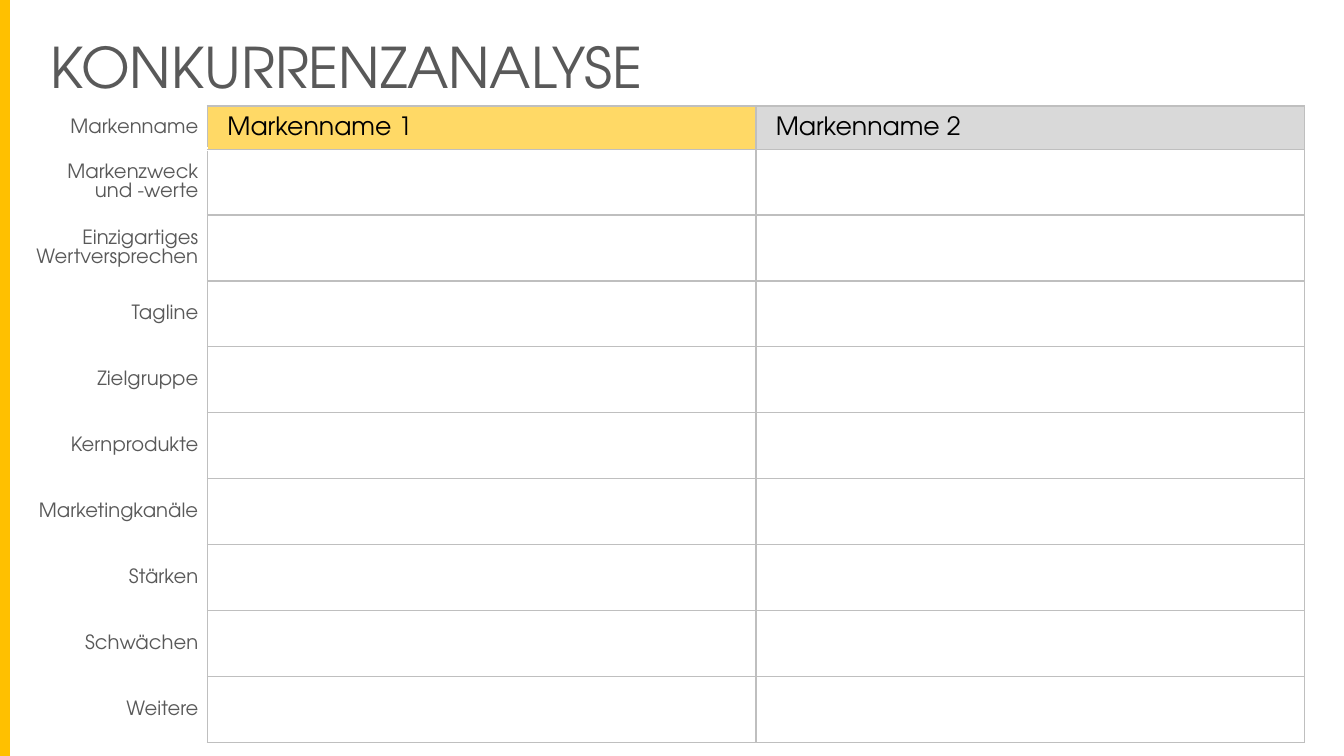
from dataclasses import dataclass

from lxml import etree
from pptx import Presentation
from pptx.dml.color import RGBColor
from pptx.enum.shapes import MSO_SHAPE
from pptx.enum.text import MSO_ANCHOR, MSO_AUTO_SIZE, PP_ALIGN
from pptx.oxml.ns import qn
from pptx.util import Cm, Pt

RECT = MSO_SHAPE.RECTANGLE
MIDDLE = MSO_ANCHOR.MIDDLE
LEFT, RIGHT = PP_ALIGN.LEFT, PP_ALIGN.RIGHT
FIT_SHAPE = MSO_AUTO_SIZE.SHAPE_TO_FIT_TEXT
TITLE_ONLY = 5


@dataclass(frozen=True)
class Theme:
    font: str = "TeX Gyre Adventor"
    accent: str = "FFC000"
    text: str = "595959"
    black: str = "000000"
    white: str = "FFFFFF"
    grid: str = "BFBFBF"
    brands: tuple = ("FFD966", "D9D9D9")
    title_size: int = 40
    brand_size: int = 18
    label_size: int = 14
    line_spacing: float = 1.07


THEME = Theme()

BRANDS = ["Markenname 1", "Markenname 2"]
LABELS = [
    "Markenname", "Markenzweck und -werte", "Einzigartiges Wertversprechen",
    "Tagline", "Zielgruppe", "Kernprodukte", "Marketingkanäle",
    "Stärken", "Schwächen", "Weitere",
]

LABEL_CELL = {"margin_left": Cm(0.18), "margin_right": Cm(0.23),
              "margin_top": 0, "margin_bottom": 0, "vertical_anchor": MIDDLE}
BRAND_CELL = {**LABEL_CELL, "margin_left": Cm(0.5), "margin_right": Cm(0.15)}


def apply(target, formats):
    for name, value in formats.items():
        setattr(target, name, value)


def write(p, text, size, color, **formats):
    apply(p, formats)
    r = p.add_run()
    r.text = text
    apply(r.font, {"name": THEME.font, "size": Pt(size), "bold": False})
    r.font.color.rgb = RGBColor.from_string(color)


def fill(target, color):
    target.fill.solid()
    target.fill.fore_color.rgb = RGBColor.from_string(color)


def set_borders(cell, borders):
    """Borders map L, R, T, B to (colour, width in points)."""
    tcPr = cell._tc.get_or_add_tcPr()
    for i, side in enumerate("LRTB"):
        color, width = borders[side]
        ln = etree.Element(qn(f"a:ln{side}"), w=str(Pt(width)))
        solid = etree.SubElement(ln, qn("a:solidFill"))
        etree.SubElement(solid, qn("a:srgbClr"), val=color)
        tcPr.insert(i, ln)


# Accent bar on the left edge
def add_bar(slide, x, y, w, h):
    sp = slide.shapes.add_shape(RECT, Cm(x), Cm(y), Cm(w), Cm(h))
    sp.shadow.inherit = False
    fill(sp, THEME.accent)
    sp.line.fill.background()


# Slide title
def add_title(slide, x, y, w, h):
    sp = slide.shapes.title
    apply(sp, {"left": Cm(x), "top": Cm(y), "width": Cm(w), "height": Cm(h)})
    tf = sp.text_frame
    apply(tf, {"word_wrap": False, "auto_size": FIT_SHAPE,
               "vertical_anchor": MSO_ANCHOR.TOP})
    write(tf.paragraphs[0], "KONKURRENZANALYSE", THEME.title_size, THEME.text,
          alignment=LEFT)


# Comparison table: labels on the left, one column per brand
def add_comparison(slide, x, y, w, h, label_w=4.7, head_h=1.09):
    n_rows, n_cols = len(LABELS), len(BRANDS) + 1
    table = slide.shapes.add_table(
        n_rows, n_cols, Cm(x), Cm(y), Cm(w), Cm(h)).table
    apply(table, {"first_row": False, "horz_banding": False})

    brand_w = (w - label_w) / len(BRANDS)
    for c, col in enumerate(table.columns):
        col.width = Cm(brand_w if c else label_w)
    row_h = (h - head_h) / (n_rows - 1)
    for i, row in enumerate(table.rows):
        row.height = Cm(row_h if i else head_h)

    # Label column, open on the left
    for i, label in enumerate(LABELS):
        cell = table.cell(i, 0)
        apply(cell, LABEL_CELL)
        fill(cell, THEME.white)
        write(cell.text_frame.paragraphs[0], label, THEME.label_size,
              THEME.text, alignment=RIGHT, line_spacing=THEME.line_spacing)
        above, below = (3 if i == 1 else 1), (1 if i else 3)
        set_borders(cell, {"L": (THEME.white, 1), "R": (THEME.grid, 1),
                           "T": (THEME.white, above),
                           "B": (THEME.white, below)})

    # Brand columns with a coloured head
    for c, (brand, color) in enumerate(zip(BRANDS, THEME.brands), start=1):
        for i in range(n_rows):
            cell = table.cell(i, c)
            fill(cell, THEME.white if i else color)
            set_borders(cell, dict.fromkeys("LRTB", (THEME.grid, 1)))
        head = table.cell(0, c)
        apply(head, BRAND_CELL)
        write(head.text_frame.paragraphs[0], brand, THEME.brand_size,
              THEME.black, alignment=LEFT, line_spacing=THEME.line_spacing)


def main():
    prs = Presentation()
    apply(prs, {"slide_width": Cm(33.87), "slide_height": Cm(19.05)})
    slide = prs.slides.add_slide(prs.slide_layouts[TITLE_ONLY])
    add_title(slide, 1.02, 0.69, 16.26, 1.96)
    add_bar(slide, 0, 0, 0.25, 19.05)
    add_comparison(slide, 0.53, 2.67, 32.34, 16.03)
    prs.save("out.pptx")


if __name__ == "__main__":
    main()
